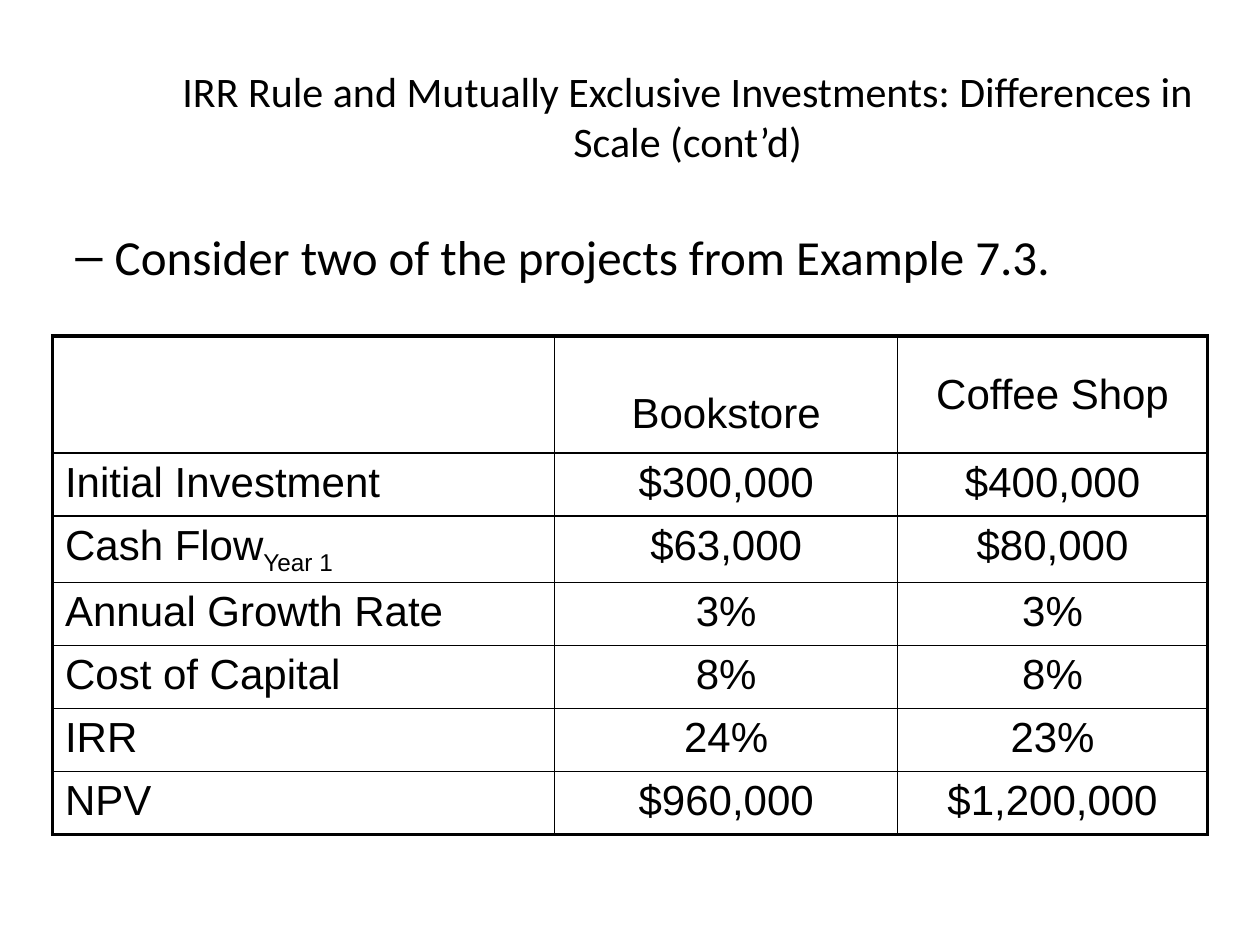
from lxml import etree
from pptx import Presentation
from pptx.dml.color import RGBColor
from pptx.enum.text import MSO_ANCHOR, PP_ALIGN
from pptx.oxml.ns import qn
from pptx.util import Pt

LEFT, MID = PP_ALIGN.LEFT, PP_ALIGN.CENTER
TOP, CENTER = MSO_ANCHOR.TOP, MSO_ANCHOR.MIDDLE
BLACK = RGBColor(0, 0, 0)

# Content
TITLE = "IRR Rule and Mutually Exclusive Investments: Differences in Scale (cont’d)"
POINT = "Consider two of the projects from Example 7.3."
ROWS = [
    ("", "Bookstore", "Coffee Shop"),
    ("Initial Investment", "$300,000", "$400,000"),
    (("Cash Flow", "Year 1"), "$63,000", "$80,000"),
    ("Annual Growth Rate", "3%", "3%"),
    ("Cost of Capital", "8%", "8%"),
    ("IRR", "24%", "23%"),
    ("NPV", "$960,000", "$1,200,000"),
]
WIDTHS = (287, 196, 177)
HEAD, ROW = 67, 36
THIN, THICK = 1, 2.25

# Formats
TITLE_FONT = {"name": "Calibri", "size": Pt(24)}
POINT_FONT = {"name": "Calibri", "size": Pt(28)}
CELL_FONT = {"name": "Arial", "size": Pt(24), "bold": False}
PAD = {"margin_left": Pt(7.2), "margin_right": Pt(7.2),
       "margin_top": Pt(3.6), "margin_bottom": Pt(3.6)}


def apply(item, values):
    for key, value in values.items():
        setattr(item, key, value)


def style(font, values):
    apply(font, values)
    font.color.rgb = BLACK


def place(shape, *box):
    apply(shape, dict(zip(("left", "top", "width", "height"), map(Pt, box))))


def border(cell, sides):
    props = cell._tc.get_or_add_tcPr()
    for i, (side, width) in enumerate(sides.items()):
        line = etree.Element(qn("a:ln" + side), w=str(Pt(width)))
        fill = etree.SubElement(line, qn("a:solidFill"))
        etree.SubElement(fill, qn("a:srgbClr"), val=str(BLACK))
        props.insert(i, line)


deck = Presentation()
deck.slide_width, deck.slide_height = Pt(720), Pt(540)
slide = deck.slides.add_slide(deck.slide_layouts[5])

# Title
title = slide.shapes.title
place(title, 90, 21, 606, 90)
frame = title.text_frame
frame.text = TITLE
apply(frame, {"word_wrap": True, "vertical_anchor": CENTER})
frame.paragraphs[0].alignment = MID
style(frame.paragraphs[0].runs[0].font, TITLE_FONT)

# Table
last, edge = len(ROWS) - 1, len(WIDTHS) - 1
grid = slide.shapes.add_table(len(ROWS), len(WIDTHS), Pt(30), Pt(192),
                              Pt(sum(WIDTHS)), Pt(HEAD + ROW * last)).table
apply(grid, {"first_row": False, "horz_banding": False})
for col, width in zip(grid.columns, WIDTHS):
    col.width = Pt(width)
for r, row in enumerate(ROWS):
    grid.rows[r].height = Pt(ROW if r else HEAD)
    for c, text in enumerate(row):
        cell = grid.cell(r, c)
        apply(cell, PAD)
        cell.vertical_anchor = TOP
        cell.fill.background()
        border(cell, {"L": THIN if c else THICK,
                      "R": THICK if c == edge else THIN,
                      "T": THIN if r else THICK,
                      "B": THICK if r == last else THIN})
        para = cell.text_frame.paragraphs[0]
        para.alignment = MID if c else LEFT
        parts = (text,) if isinstance(text, str) else text
        for n, part in enumerate(parts):
            if not part:
                continue
            run = para.add_run()
            run.text = part
            style(run.font, CELL_FONT)
            if n:  # second part is a subscript
                run._r.get_or_add_rPr().set("baseline", "-25000")

# Column heads sit at different heights
grid.cell(0, 1).margin_top = Pt(31.2)
grid.cell(0, 2).vertical_anchor = CENTER

# Bullet point
box = slide.shapes.add_textbox(Pt(0), Pt(126), Pt(653), Pt(97))
box.text_frame.word_wrap = True
para = box.text_frame.paragraphs[0]
props = para._p.get_or_add_pPr()
props.set("marL", str(Pt(58.5)))
props.set("indent", str(Pt(-22.5)))
etree.SubElement(props, qn("a:buFont"), typeface="Arial")
etree.SubElement(props, qn("a:buChar"), char="–")
run = para.add_run()
run.text = POINT
style(run.font, POINT_FONT)

deck.save("out.pptx")
